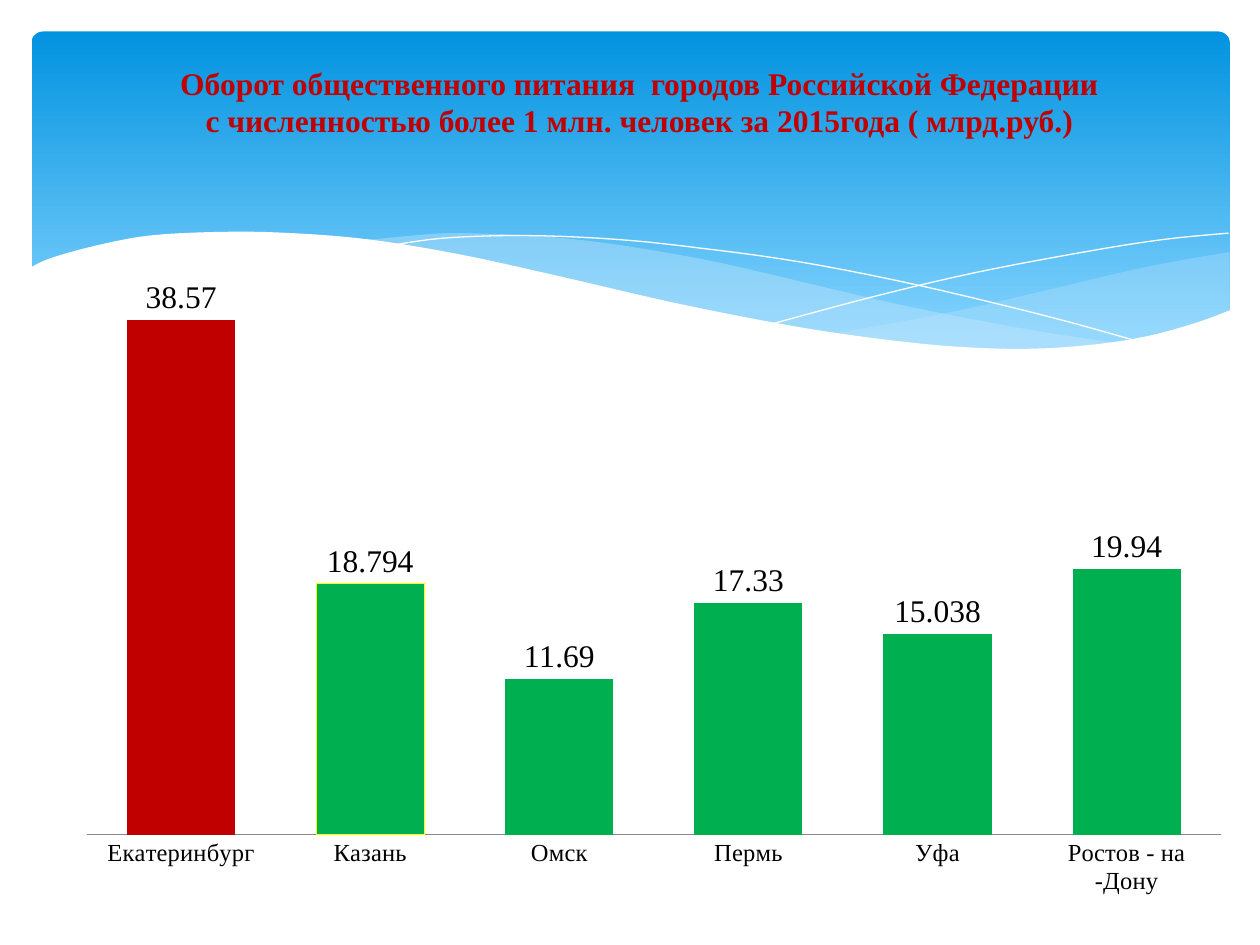
from lxml import etree
from pptx import Presentation
from pptx.chart.data import CategoryChartData
from pptx.dml.color import RGBColor
from pptx.enum.chart import XL_CHART_TYPE, XL_LABEL_POSITION, XL_TICK_MARK
from pptx.enum.shapes import MSO_SHAPE
from pptx.enum.text import MSO_ANCHOR, PP_ALIGN
from pptx.oxml import parse_xml
from pptx.oxml.ns import nsdecls, qn
from pptx.util import Pt

COLUMN = XL_CHART_TYPE.COLUMN_CLUSTERED
OUTSIDE_END = XL_LABEL_POSITION.OUTSIDE_END
NO_TICK = XL_TICK_MARK.NONE
ROUNDED = MSO_SHAPE.ROUNDED_RECTANGLE
MIDDLE = MSO_ANCHOR.MIDDLE
CENTER = PP_ALIGN.CENTER

COLORS = {
    "sky": "0293E0", "light sky": "83D3FE", "band": "C6E7FC", "white": "FFFFFF",
    "red": "C00000", "green": "00B050", "yellow": "FFFF00",
    "black": "000000", "axis": "888888",
}
SERIF, SANS = "Times New Roman", "Calibri"

TITLE = ("Оборот общественного питания  городов Российской Федерации\v"
         "с численностью более 1 млн. человек за 2015года ( млрд.руб.)")
TURNOVER = {
    "Екатеринбург": 38.57, "Казань": 18.794, "Омск": 11.69,
    "Пермь": 17.33, "Уфа": 15.038, "Ростов - на -Дону": 19.94,
}
HEADER_BOX = (18, 18, 684.7, 194.4)
TITLE_BOX = (25.2, 21.6, 680.4, 72.7)
CHART_BOX = (36, 126, 675.4, 393.1)
PLOT_AREA = {"x": 0.02, "y": 0.02, "w": 0.96, "h": 0.873}

# Each outline is a list of smooth arcs, given by the points they pass through.
RIGHT_BAND = [
    [(702.7, 144), (673.2, 149), (641.5, 155.5), (599, 165.6), (542.2, 178.6), (475.9, 190.8)],
    [(475.9, 190.8), (507.6, 195.1), (545, 198.7), (586.1, 200.2), (627.8, 197.3),
     (663.1, 190.8), (683.3, 185), (702.7, 177.8)],
]
LONG_BAND = [
    [(643, 196.6), (602.6, 190.8), (558, 182.9), (508.3, 172.8), (452.9, 159.8),
     (409.7, 149.8), (370.1, 142.6), (334.8, 137.5), (302.4, 134.6), (259.9, 133.2),
     (236.2, 134.6), (205.9, 137.5)],
    [(205.9, 137.5), (246.2, 143.3), (290.9, 151.9), (323.3, 159.8), (381.6, 172.8),
     (432.7, 183.6), (478.8, 191.5), (519.8, 197.3), (565.2, 200.2), (603.4, 200.2),
     (643, 196.6)],
]
FALLING_LINE = [[(222.5, 140.4), (253.4, 136.1), (299.5, 134.6), (352.1, 136.8),
                 (400.3, 141.8), (457.9, 149.8), (523.4, 162.7), (598.3, 180.7), (653, 195.8)]]
RISING_LINE = [[(441.4, 185), (500.4, 169.2), (558.7, 155.5), (623.5, 143.3),
                (665.3, 136.8), (702, 133.2)]]
WHITE_WAVE = [
    [(16.6, 153.4), (28.8, 147.6), (54.7, 140.4), (85.7, 134.6), (127.4, 132.5),
     (165.6, 133.2), (210.2, 136.8), (262.8, 145.4), (321.8, 158.4), (380.9, 172.1),
     (434.2, 182.9), (481, 190.8), (535.7, 197.3), (582.5, 199.4), (621.4, 197.3),
     (655.2, 192.2), (684, 184.3), (703.4, 177.1)],
    [(703.4, 236.9), (16.6, 236.9)],
]


def rgb(name):
    return RGBColor.from_string(COLORS[name])


def points(box):
    return [Pt(length) for length in box]


def smooth(arc, steps=5):
    """Return points on a Catmull-Rom curve through the points of the arc."""
    if len(arc) == 2:
        return arc
    padded = [arc[0], *arc, arc[-1]]
    curve = [arc[0]]
    for a, b, c, d in zip(padded, padded[1:], padded[2:], padded[3:]):
        for step in range(1, steps + 1):
            t = step / steps
            curve.append(tuple(
                q + t * (r - p) / 2 + t**2 * (2 * p - 5 * q + 4 * r - s) / 2
                + t**3 * (3 * q - p - 3 * r + s) / 2
                for p, q, r, s in zip(a, b, c, d)))
    return curve


def add_wave(slide, outline, fill=None, opacity=None):
    """Add a filled wave, or a white hairline when there is no fill."""
    start, *rest = [(Pt(x), Pt(y)) for arc in outline for x, y in smooth(arc)]
    builder = slide.shapes.build_freeform(*start)
    builder.add_line_segments(rest, close=fill is not None)
    shape = builder.convert_to_shape()
    shape.shadow.inherit = False
    if fill is None:
        shape.fill.background()
        shape.line.color.rgb = rgb("white")
        shape.line.width = Pt(0)
        return
    shape.fill.solid()
    shape.fill.fore_color.rgb = rgb(fill)
    shape.line.fill.background()
    if opacity:
        color = shape.fill._xPr.find(".//" + qn("a:srgbClr"))
        etree.SubElement(color, qn("a:alpha"), val=str(opacity * 1000))


def add_header(slide):
    header = slide.shapes.add_shape(ROUNDED, *points(HEADER_BOX))
    header.adjustments[0] = 0.034
    header.shadow.inherit = False
    header.line.fill.background()
    header.fill.gradient()
    header.fill.gradient_angle = 270
    stops = zip(header.fill.gradient_stops, ("sky", "light sky"), (0, 0.9))
    for stop, color, position in stops:
        stop.color.rgb = rgb(color)
        stop.position = position
    add_wave(slide, RIGHT_BAND, "band", 29)
    add_wave(slide, LONG_BAND, "band", 40)
    add_wave(slide, FALLING_LINE)
    add_wave(slide, RISING_LINE)
    add_wave(slide, WHITE_WAVE, "white")


def set_font(font, size, name, color="black", bold=False):
    font.size, font.name, font.bold = Pt(size), name, bold
    font.color.rgb = rgb(color)


def add_turnover_chart(slide):
    data = CategoryChartData()
    data.categories = list(TURNOVER)
    data.add_series("Series 1", list(TURNOVER.values()))
    chart = slide.shapes.add_chart(COLUMN, *points(CHART_BOX), data).chart
    chart.has_legend = chart.has_title = False
    set_font(chart.font, 18, SANS)

    value_axis = chart.value_axis
    value_axis.visible = value_axis.has_major_gridlines = False
    value_axis.minimum_scale, value_axis.maximum_scale = 0, 45
    category_axis = chart.category_axis
    category_axis.major_tick_mark = category_axis.minor_tick_mark = NO_TICK
    category_axis.format.line.color.rgb = rgb("axis")
    set_font(category_axis.tick_labels.font, 14, SERIF)

    plot = chart.plots[0]
    plot.gap_width = 75
    plot.vary_by_categories = False
    series = plot.series[0]
    series.format.fill.solid()
    series.format.fill.fore_color.rgb = rgb("green")
    leader = series.points[0].format.fill
    leader.solid()
    leader.fore_color.rgb = rgb("red")
    outlined = series.points[1].format
    outlined.fill.solid()
    outlined.fill.fore_color.rgb = rgb("green")
    outlined.line.color.rgb = rgb("yellow")
    labels = series.data_labels
    labels.show_value = True
    labels.position = OUTSIDE_END
    set_font(labels.font, 18, SERIF)

    plot_area = chart._chartSpace.chart.plotArea
    for layout in plot_area.findall(qn("c:layout")):
        plot_area.remove(layout)
    modes = '<c:xMode val="edge"/><c:yMode val="edge"/>'
    sizes = "".join(f'<c:{side} val="{part}"/>' for side, part in PLOT_AREA.items())
    plot_area.insert(0, parse_xml(
        f'<c:layout {nsdecls("c")}><c:manualLayout><c:layoutTarget val="inner"/>'
        f"{modes}{sizes}</c:manualLayout></c:layout>"))


def add_title(slide):
    text_frame = slide.shapes.add_textbox(*points(TITLE_BOX)).text_frame
    text_frame.word_wrap = True
    text_frame.vertical_anchor = MIDDLE
    paragraph = text_frame.paragraphs[0]
    paragraph.text = TITLE
    paragraph.alignment = CENTER
    for run in paragraph.runs:
        set_font(run.font, 18, SERIF, "red", bold=True)


def main():
    presentation = Presentation()
    presentation.slide_width, presentation.slide_height = Pt(720), Pt(540)
    slide = presentation.slides.add_slide(presentation.slide_layouts[6])
    add_header(slide)
    add_turnover_chart(slide)
    add_title(slide)
    presentation.save("out.pptx")


if __name__ == "__main__":
    main()
